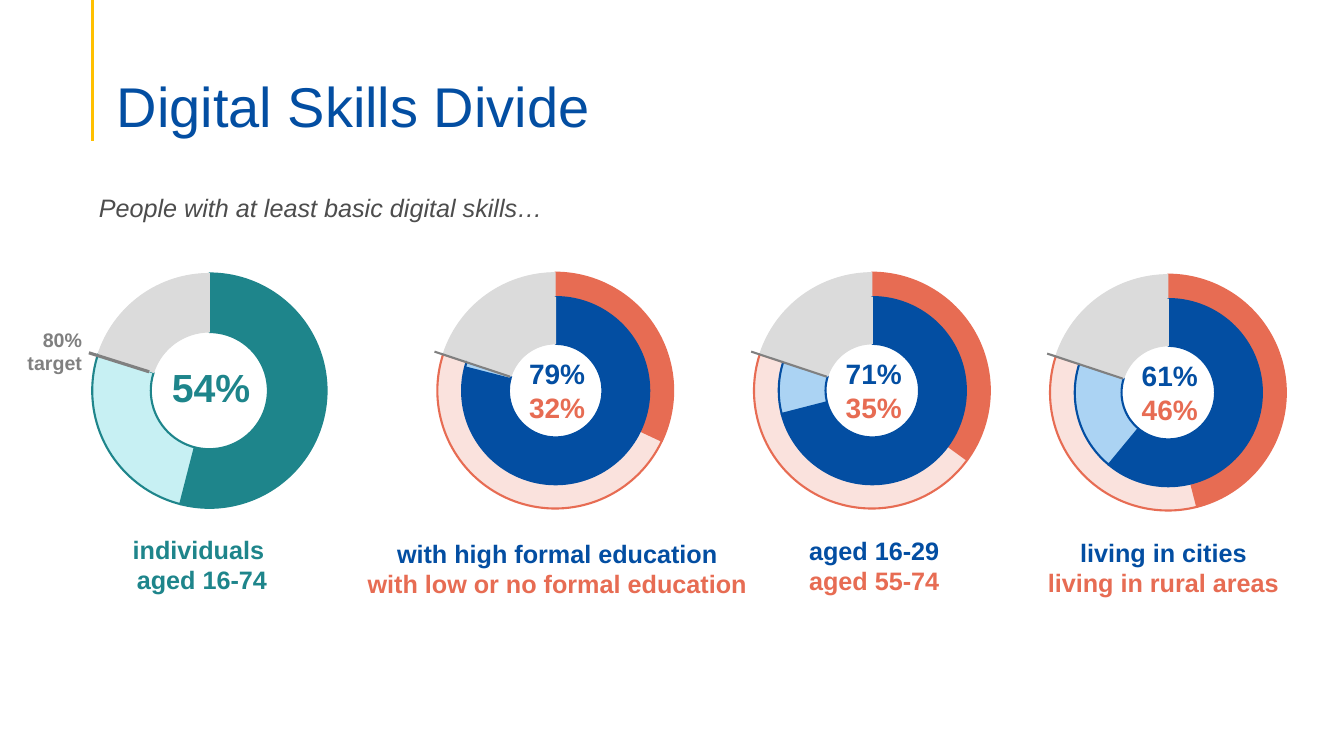
from pptx import Presentation
from pptx.chart.data import CategoryChartData as Data
from pptx.dml.color import RGBColor
from pptx.enum.chart import XL_CHART_TYPE as Kind
from pptx.enum.shapes import MSO_CONNECTOR as Conn
from pptx.enum.text import MSO_ANCHOR as Anchor, PP_ALIGN as Align
from pptx.oxml import parse_xml
from pptx.oxml.ns import nsdecls, qn
from pptx.util import Cm, Pt

TEAL, BLUE, CORAL = "1E858B", "034EA2", "E76C53"
AQUA, SKY, PINK = "C7F0F3", "ABD3F3", "FAE2DD"
GREY, MID, DARK, GOLD = "DBDBDB", "808080", "4D4D4D", "FFC000"
TARGET = 80

rgb = RGBColor.from_string

prs = Presentation()
prs.slide_width, prs.slide_height = Cm(33.87), Cm(19.05)
slide = prs.slides.add_slide(prs.slide_layouts[5])
shapes = slide.shapes


def write(box, lines, size, align, bold=True, italic=False):
    """Fill one paragraph with (text, colour) lines."""
    para = box.text_frame.paragraphs[0]
    para.alignment = align
    for i, (text, color) in enumerate(lines):
        if i:
            para.add_line_break()
        run = para.add_run()
        run.text = text
        font = run.font
        font.name, font.size = "Arial", Pt(size)
        font.bold, font.italic = bold, italic
        font.color.rgb = rgb(color)
    return para


def ring(place, share, full, pale, hole):
    """Draw a doughnut: share reached, gap to the target, rest."""
    data = Data()
    data.categories = ["1", "2", "3", "4"]
    data.add_series("Series 1", [share, TARGET - share, 100 - TARGET, None])
    chart = shapes.add_chart(Kind.DOUGHNUT, *map(Cm, place), data).chart
    chart.has_legend = chart.has_title = False
    chart.font.name, chart.font.size = "Arial", Pt(10)
    chart.font.color.rgb = rgb(DARK)
    plot = chart.plots[0]
    plot.vary_by_categories = True
    fills = [(full, full), (pale, full), (GREY, GREY), ("ED8D2F", GREY)]
    for i, (fill, edge) in enumerate(fills):
        look = plot.series[0].points[i].format
        look.fill.solid()
        look.fill.fore_color.rgb = rgb(fill)
        look.line.color.rgb = rgb(edge)
        look.line.width = Pt(0.75 if edge == GREY else 1.5)
    # Hole size and plot position
    root = chart._chartSpace
    next(root.iter(qn("c:holeSize"))).set("val", str(hole))
    area = next(root.iter(qn("c:plotArea")))
    for old in area.findall(qn("c:layout")):
        area.remove(old)
    spots = [("x", 0.149), ("y", 0.122), ("w", 0.743), ("h", 0.838)]
    tags = '<c:layoutTarget val="inner"/><c:xMode val="edge"/><c:yMode val="edge"/>'
    tags += "".join(f'<c:{key} val="{val}"/>' for key, val in spots)
    area.insert(0, parse_xml(
        f'<c:layout {nsdecls("c")}><c:manualLayout>{tags}</c:manualLayout></c:layout>'))


# Title
title = shapes.title
title.left, title.top, title.width, title.height = map(Cm, (2.69, 1.35, 29.21, 2.18))
frame = title.text_frame
frame.vertical_anchor, frame.margin_bottom = Anchor.BOTTOM, 0
frame.word_wrap = True
write(title, [("Digital Skills Divide", BLUE)], 40, Align.LEFT, False).line_spacing = 0.9

# Rings: the first stands alone, the others pair two groups
ring((1.14, 5.82, 7.95, 7.44), 54, TEAL, AQUA, 61)
texts = [
    ((3.76, 9.04, 3.12, 1.45), [("54%", TEAL)], 28, 0),
    ((1.09, 13.34, 8, 1.8), [("individuals ", TEAL), ("aged 16-74", TEAL)], 18, 6),
]
marks = [((2.34, 0, 2.34, 3.56), GOLD, 2.25),
         ((2.24, 8.89, 3.76, 9.37), MID, 2.25)]
pairs = [
    (9.83, 5.82, 79, 32, "with high formal education",
     "with low or no formal education", (8.61, 13.44, 10.87, 1.8)),
    (17.81, 5.82, 71, 35, "aged 16-29", "aged 55-74", (18.03, 13.36, 8, 1.8)),
    (25.27, 5.87, 61, 46, "living in cities", "living in rural areas",
     (25.32, 13.41, 8, 1.8)),
]
for x, y, high, low, top, base, place in pairs:
    ring((x, y, 8, 7.44), low, CORAL, PINK, 80)
    ring((x + 0.87, y + 0.77, 6.35, 6.02), high, BLUE, SKY, 61)
    texts.append(((x + 2.8, y + 3.05, 2.82, 1.96),
                  [(f"{high}%", BLUE), (f"{low}%", CORAL)], 20, 0))
    texts.append((place, [(top, BLUE), (base, CORAL)], 18, 6))
    marks.append(((x + 1.12, y + 3.04, x + 3.02, y + 3.67), MID, 1.5))

# Shares and captions
for place, lines, size, after in texts:
    box = shapes.add_textbox(*map(Cm, place))
    box.text_frame.word_wrap = True
    write(box, lines, size, Align.CENTER).space_after = Pt(after)

# Side rule and target marks
for ends, color, width in marks:
    line = shapes.add_connector(Conn.STRAIGHT, *map(Cm, ends))
    line.line.color.rgb, line.line.width = rgb(color), Pt(width)
    line._element.spPr.append(parse_xml(f'<a:effectLst {nsdecls("a")}/>'))

# Lead-in and target label
lead = shapes.add_textbox(Cm(2.24), Cm(4.72), Cm(11.71), Cm(1.02))
lead.text_frame.word_wrap = False
write(lead, [("People with at least basic digital skills…", DARK)], 18,
      Align.LEFT, False, True)
goal = shapes.add_textbox(Cm(0.41), Cm(8.13), Cm(1.91), Cm(1.45))
goal.text_frame.word_wrap = False
write(goal, [(f"{TARGET}%", MID), ("target", MID)], 14, Align.RIGHT)

prs.save("out.pptx")
